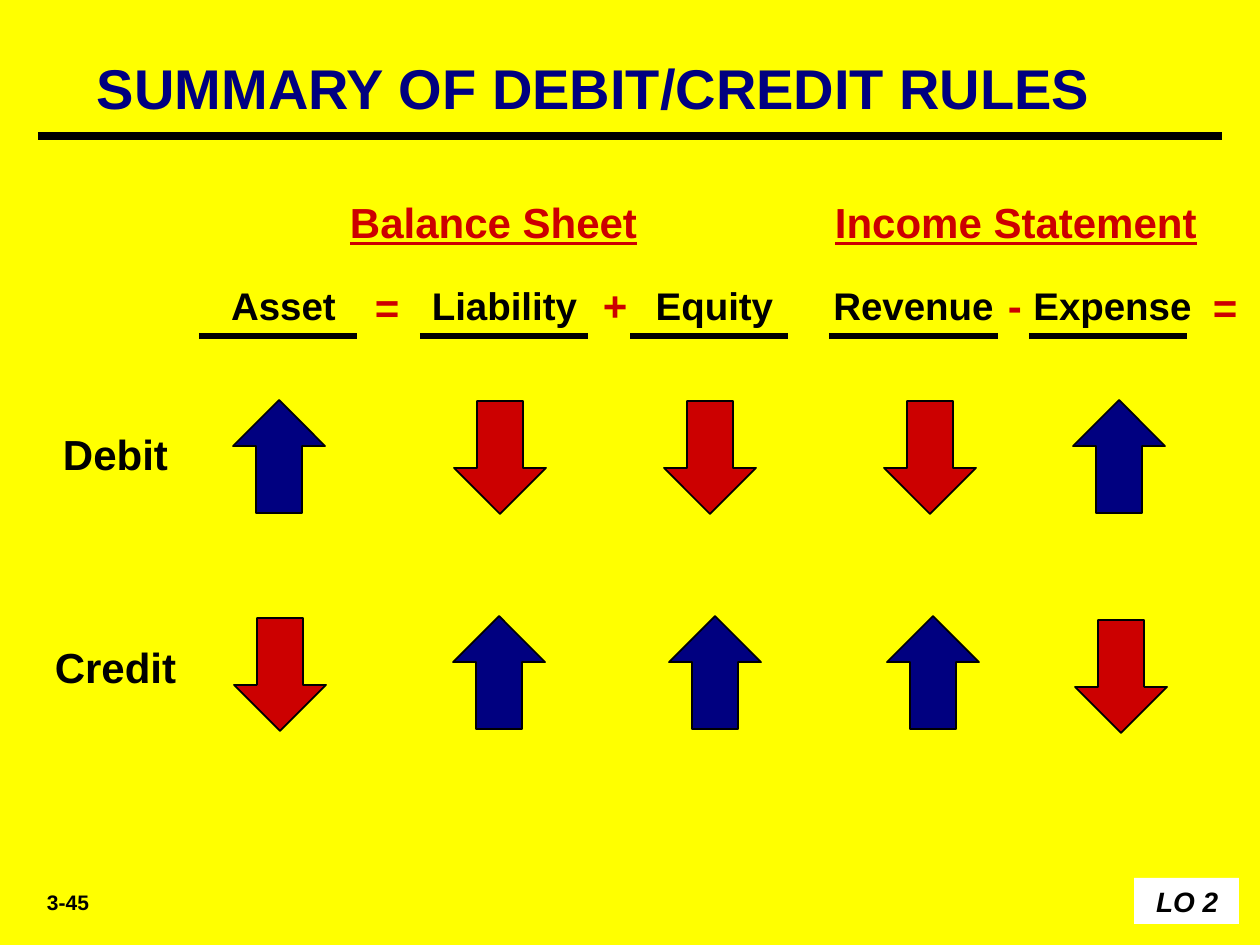
import pptx
import pptx.util
import pptx.dml.color
import pptx.enum.shapes
import pptx.enum.text
import pptx.oxml.ns
import lxml.etree

EMU_PER_PX = 914400 / 126
COLORS = {"yellow": "FFFF00", "navy": "000080", "red": "CC0000", "black": "000000", "white": "FFFFFF"}
ALIGN = pptx.enum.text.PP_ALIGN
SHAPES = pptx.enum.shapes.MSO_SHAPE

# account, label left, underline left and right
ACCOUNTS = [
    ("Asset", 189, 199, 357),
    ("Liability", 410, 420, 588),
    ("Equity", 620, 630, 788),
    ("Revenue", 819, 829, 998),
    ("Expense", 1018, 1029, 1187),
]
OPERATORS = [("=", 362, 273), ("+", 590, 271), ("-", 995, 271), ("=", 1200, 273)]
# row label, label top, (arrow left, arrow top, goes up) for each account
RULES = [
    ("Debit", 420, [(233, 400, True), (454, 401, False), (664, 401, False),
                    (884, 401, False), (1073, 400, True)]),
    ("Credit", 633, [(234, 618, False), (453, 616, True), (669, 616, True),
                     (887, 616, True), (1075, 620, False)]),
]


def px(value):
    return pptx.util.Emu(round(value * EMU_PER_PX))


def rgb(name):
    return pptx.dml.color.RGBColor.from_string(COLORS[name])


def add_run(paragraph, text, size, color="black", underline=False, italic=False):
    run = paragraph.add_run()
    run.text = text
    font = run.font
    font.name = "Arial"
    font.size = pptx.util.Pt(size)
    font.bold = True
    font.italic = italic
    font.underline = underline
    font.color.rgb = rgb(color)


def prepare_text(shape, align, drop):
    """Set margins and alignment; drop is the extra top margin. Return the paragraph."""
    frame = shape.text_frame
    frame.word_wrap = True
    frame.vertical_anchor = pptx.enum.text.MSO_ANCHOR.TOP
    frame.margin_left = frame.margin_right = px(13)
    frame.margin_top = px(6 + drop)
    frame.margin_bottom = px(6)
    paragraph = frame.paragraphs[0]
    paragraph.alignment = align
    return paragraph


def add_text_box(slide, box, align=ALIGN.LEFT, drop=3):
    return prepare_text(slide.shapes.add_textbox(*map(px, box)), align, drop)


def add_label(slide, text, box, size, color="black", align=ALIGN.CENTER, drop=3):
    add_run(add_text_box(slide, box, align, drop), text, size, color)


def add_rule(slide, left, right, y, width):
    connector = slide.shapes.add_connector(
        pptx.enum.shapes.MSO_CONNECTOR.STRAIGHT, px(left), px(y), px(right), px(y))
    connector.line.color.rgb = rgb("black")
    connector.line.width = pptx.util.Pt(width)
    lxml.etree.SubElement(connector._element.spPr, pptx.oxml.ns.qn("a:effectLst"))


def add_filled_shape(slide, kind, box, color):
    shape = slide.shapes.add_shape(kind, *map(px, box))
    shape.shadow.inherit = False
    shape.fill.solid()
    shape.fill.fore_color.rgb = rgb(color)
    return shape


def add_arrow(slide, left, top, goes_up):
    arrow = add_filled_shape(slide, SHAPES.DOWN_ARROW, (left, top, 92, 113),
                             "navy" if goes_up else "red")
    arrow.rotation = 180 if goes_up else 0
    arrow.line.color.rgb = rgb("black")
    arrow.line.width = pptx.util.Pt(1)


def add_statement_headings(slide):
    """Tab stops carry the wide underline around the first heading."""
    paragraph = add_text_box(slide, (162, 188, 1109, 63))
    properties = paragraph._p.get_or_add_pPr()
    tab_list = lxml.etree.SubElement(properties, pptx.oxml.ns.qn("a:tabLst"))
    for position in (81, 175, 555, 660):
        tab = lxml.etree.SubElement(tab_list, pptx.oxml.ns.qn("a:tab"))
        tab.set("pos", str(px(position)))
        tab.set("algn", "l")
    for text, underline in (("\t", False), ("\tBalance Sheet\t", True),
                            ("\t", False), ("Income Statement", True)):
        add_run(paragraph, text, 24, "red", underline)


def add_objective_tag(slide):
    tag = add_filled_shape(slide, SHAPES.RECTANGLE, (1134, 878, 105, 46), "white")
    tag.line.fill.background()
    add_run(prepare_text(tag, ALIGN.RIGHT, 1), "LO 2 ", 16, italic=True)


def main():
    presentation = pptx.Presentation()
    presentation.slide_width = px(1260)
    presentation.slide_height = px(945)
    slide = presentation.slides.add_slide(presentation.slide_layouts[6])
    slide.background.fill.solid()
    slide.background.fill.fore_color.rgb = rgb("yellow")

    add_label(slide, "SUMMARY OF DEBIT/CREDIT RULES", (84, 42, 1134, 77), 32, "navy",
              ALIGN.LEFT, drop=6)
    add_rule(slide, 38, 1222, 136, 4.5)
    add_statement_headings(slide)
    for symbol, left, top in OPERATORS:
        add_label(slide, symbol, (left, top, 60, 63), 24, "red", ALIGN.LEFT)
    for account, label_left, rule_left, rule_right in ACCOUNTS:
        add_label(slide, account, (label_left, 273, 189, 59), 22)
        add_rule(slide, rule_left, rule_right, 336, 3)
    for name, label_top, arrows in RULES:
        add_label(slide, name, (21, label_top, 189, 63), 24)
        for arrow in arrows:
            add_arrow(slide, *arrow)
    add_label(slide, "3-45", (10, 882, 116, 38), 12, drop=2)
    add_objective_tag(slide)

    presentation.save("out.pptx")


if __name__ == "__main__":
    main()
